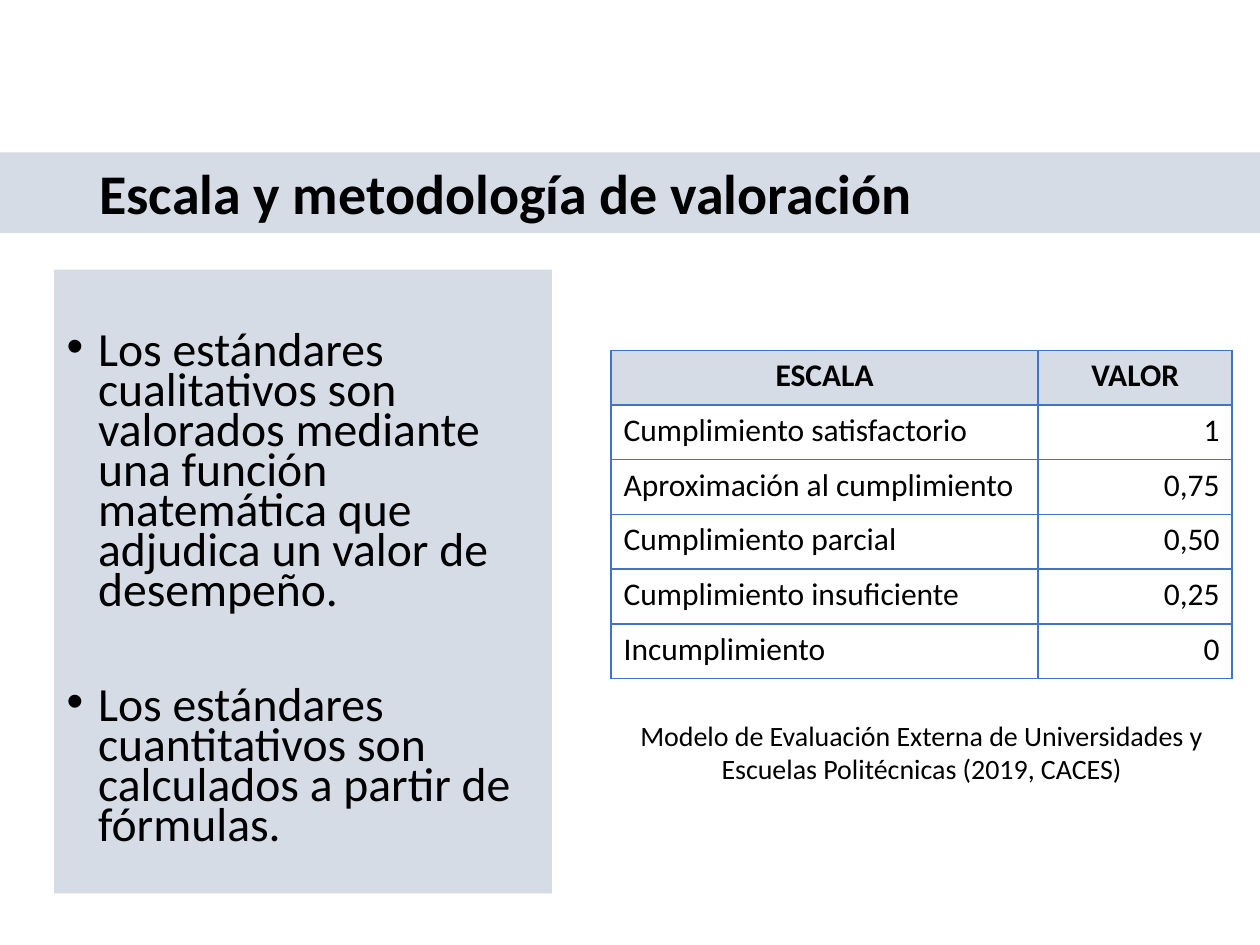
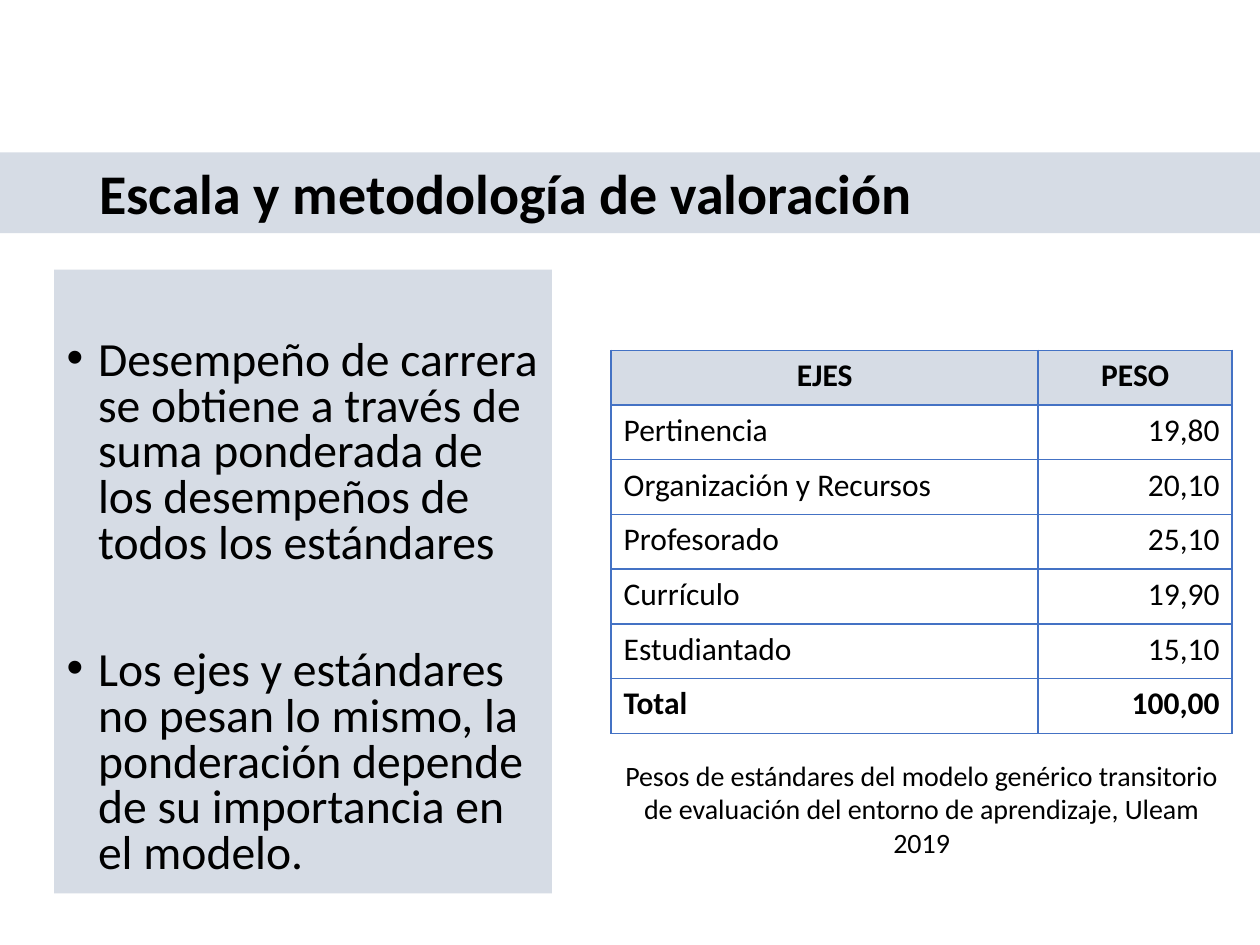
"""Build two slides on the scale and method of assessment."""
from lxml import etree
from pptx import Presentation, util as u
from pptx.dml.color import RGBColor
from pptx.enum import shapes, text
from pptx.oxml.ns import qn

TITLE = "Escala y metodología de valoración"
SLIDES = [
    {
        "bullets": [
            "Los estándares cualitativos son valorados mediante una función matemática que adjudica un valor de desempeño.",
            "Los estándares cuantitativos son calculados a partir de fórmulas.",
        ],
        "line_spacing": 0.7,
        "rows": [
            ("ESCALA", "VALOR"),
            ("Cumplimiento satisfactorio", "1"),
            ("Aproximación al cumplimiento", "0,75"),
            ("Cumplimiento parcial", "0,50"),
            ("Cumplimiento insuficiente", "0,25"),
            ("Incumplimiento", "0"),
        ],
        "caption": "Modelo de Evaluación Externa de Universidades y Escuelas Politécnicas (2019, CACES)",
        "caption_place": (5.65, 0.64),
    },
    {
        "bullets": [
            "Desempeño de carrera se obtiene a través de suma ponderada de los desempeños de todos los estándares",
            "Los ejes y estándares no pesan lo mismo, la ponderación depende de su importancia en el modelo.",
        ],
        "line_spacing": 0.8,
        "rows": [
            ("EJES", "PESO"),
            ("Pertinencia", "19,80"),
            ("Organización y Recursos", "20,10"),
            ("Profesorado", "25,10"),
            ("Currículo", "19,90"),
            ("Estudiantado", "15,10"),
            ("Total", "100,00"),
        ],
        "caption": "Pesos de estándares del modelo genérico transitorio de evaluación del entorno de aprendizaje, Uleam 2019",
        "caption_place": (5.97, 0.91),
    },
]

COLORS = {"band": "D6DCE5", "border": "4472C4", "text": "000000", "paper": "FFFFFF"}
FONT = "Calibri"
TITLE_FORMAT = {"size": u.Pt(32), "bold": True}
BULLET_FORMAT = {"size": u.Pt(27.2), "bold": False}
CAPTION_FORMAT = {"size": u.Pt(16), "bold": False}
BULLET_LINE = 33.2
PARAGRAPH_GAP = 10
TABLE_LEFT, TABLE_TOP = 4.85, 2.78
COLUMN_WIDTHS = (3.39, 1.54)
ROW_HEIGHT = u.Inches(3.04) // 7


def color(name):
    return RGBColor.from_string(COLORS[name])


def write(paragraph, words, format_values):
    run = paragraph.add_run()
    run.text = words
    for name, value in {"name": FONT, **format_values}.items():
        setattr(run.font, name, value)
    run.font.color.rgb = color("text")


def add_panel(slide, left, top, width, height, anchor):
    shape = slide.shapes.add_shape(
        shapes.MSO_SHAPE.RECTANGLE, *map(u.Inches, (left, top, width, height)))
    shape.shadow.inherit = False
    shape.fill.solid()
    shape.fill.fore_color.rgb = color("band")
    shape.line.fill.background()
    shape.text_frame.word_wrap = True
    shape.text_frame.vertical_anchor = anchor
    return shape.text_frame


def indent(paragraph, left, first):
    properties = paragraph._p.get_or_add_pPr()
    properties.set("marL", str(u.Inches(left)))
    properties.set("indent", str(u.Inches(first)))
    return properties


def add_title(slide):
    frame = add_panel(slide, 0, 1.21, 10, 0.64, text.MSO_ANCHOR.BOTTOM)
    paragraph = frame.paragraphs[0]
    indent(paragraph, 0, 0.69)
    paragraph.alignment = text.PP_ALIGN.LEFT
    paragraph.line_spacing = 0.9
    write(paragraph, TITLE, TITLE_FORMAT)


def add_bullets(slide, bullets, line_spacing):
    frame = add_panel(slide, 0.43, 2.14, 3.95, 4.95, text.MSO_ANCHOR.TOP)
    line = BULLET_LINE * line_spacing
    frame.margin_top = u.Inches(0.05) + u.Pt(PARAGRAPH_GAP + line)
    for index, words in enumerate(bullets):
        paragraph = frame.add_paragraph() if index else frame.paragraphs[0]
        properties = indent(paragraph, 0.25, -0.25)
        etree.SubElement(properties, qn("a:buFont")).set("typeface", "Arial")
        etree.SubElement(properties, qn("a:buChar")).set("char", "•")
        paragraph.alignment = text.PP_ALIGN.LEFT
        paragraph.line_spacing = line_spacing
        if index:
            paragraph.space_before = u.Pt(2 * PARAGRAPH_GAP + line)
        write(paragraph, words, BULLET_FORMAT)


def add_borders(cell):
    properties = cell._tc.get_or_add_tcPr()
    for index, side in enumerate(("lnL", "lnR", "lnT", "lnB")):
        border = etree.Element(qn("a:" + side), w=str(u.Pt(1)))
        fill = etree.SubElement(border, qn("a:solidFill"))
        etree.SubElement(fill, qn("a:srgbClr")).set("val", COLORS["border"])
        properties.insert(index, border)


def add_table(slide, rows):
    table = slide.shapes.add_table(
        len(rows), len(COLUMN_WIDTHS), u.Inches(TABLE_LEFT), u.Inches(TABLE_TOP),
        u.Inches(sum(COLUMN_WIDTHS)), ROW_HEIGHT * len(rows)).table
    table.horz_banding = False
    for column, width in zip(table.columns, COLUMN_WIDTHS):
        column.width = u.Inches(width)
    for row_index, row in enumerate(rows):
        header = row_index == 0
        bold = header or row[0] == "Total"
        for column_index, words in enumerate(row):
            cell = table.cell(row_index, column_index)
            cell.fill.solid()
            cell.fill.fore_color.rgb = color("band" if header else "paper")
            add_borders(cell)
            paragraph = cell.text_frame.paragraphs[0]
            body_alignment = (text.PP_ALIGN.LEFT, text.PP_ALIGN.RIGHT)[column_index]
            paragraph.alignment = text.PP_ALIGN.CENTER if header else body_alignment
            write(paragraph, words, {"size": u.Pt(18), "bold": bold})


def add_caption(slide, words, top, height):
    box = slide.shapes.add_textbox(
        *map(u.Inches, (TABLE_LEFT, top, sum(COLUMN_WIDTHS), height)))
    box.text_frame.word_wrap = True
    box.text_frame.auto_size = text.MSO_AUTO_SIZE.SHAPE_TO_FIT_TEXT
    paragraph = box.text_frame.paragraphs[0]
    paragraph.alignment = text.PP_ALIGN.CENTER
    write(paragraph, words, CAPTION_FORMAT)


def main():
    presentation = Presentation()
    presentation.slide_width = u.Inches(10)
    presentation.slide_height = u.Inches(7.5)
    for content in SLIDES:
        slide = presentation.slides.add_slide(presentation.slide_layouts[6])
        add_title(slide)
        add_table(slide, content["rows"])
        add_bullets(slide, content["bullets"], content["line_spacing"])
        add_caption(slide, content["caption"], *content["caption_place"])
    presentation.save("out.pptx")


if __name__ == "__main__":
    main()
